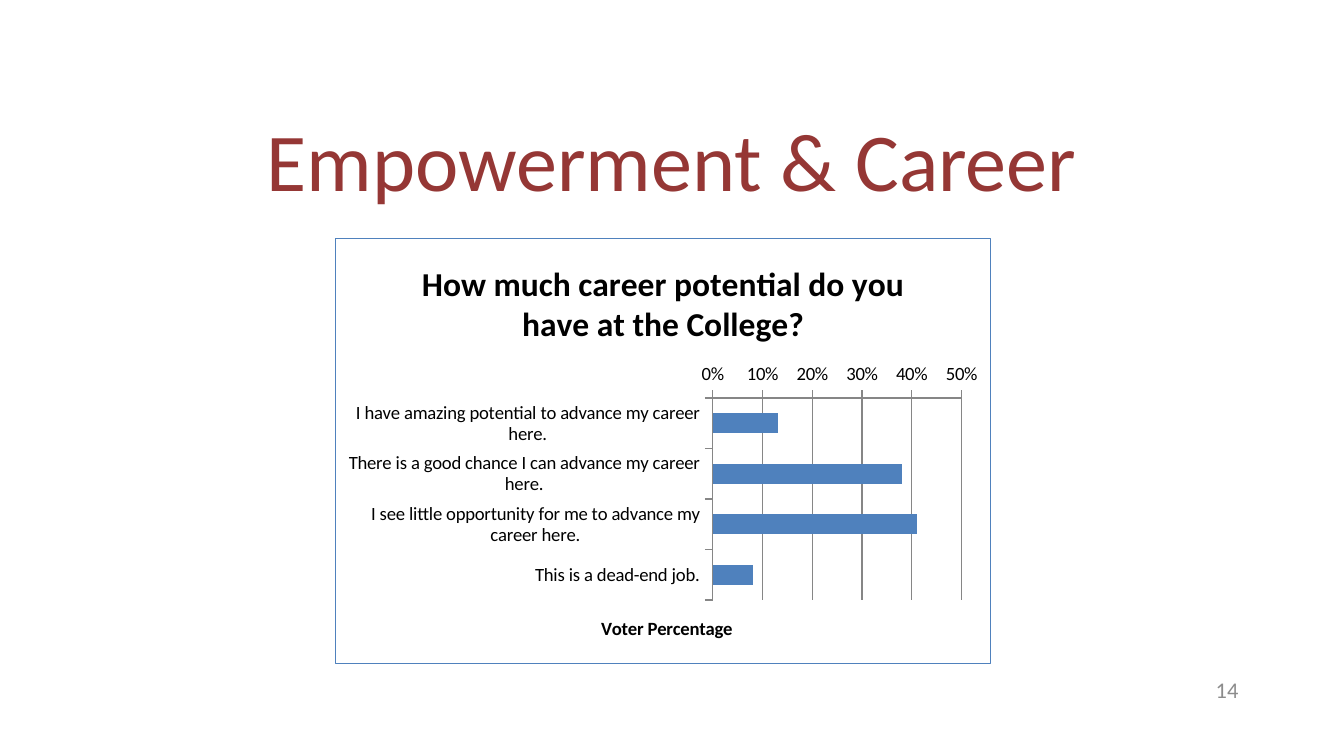
from dataclasses import dataclass

from lxml.etree import SubElement
from pptx import Presentation
from pptx.chart.data import CategoryChartData
from pptx.dml.color import RGBColor
from pptx.enum.chart import XL_CHART_TYPE, XL_TICK_MARK
from pptx.enum.text import MSO_ANCHOR, PP_ALIGN
from pptx.oxml import parse_xml
from pptx.oxml.ns import nsdecls, qn
from pptx.util import Pt


@dataclass(frozen=True)
class Theme:
    font: str = "Calibri"
    heading: str = "953735"
    bar: str = "4F81BD"
    grid: str = "868686"
    text: str = "000000"
    muted: str = "8C8C8C"
    title_size: int = 44
    chart_title_size: int = 18
    label_size: int = 10
    number_size: int = 12


def format_font(font, theme, size, color, bold=False):
    font.name = theme.font
    font.size = Pt(size)
    font.bold = bold
    font.color.rgb = RGBColor.from_string(color)


def write_text(text_frame, text, *, theme, size, color, bold=False,
               align=PP_ALIGN.CENTER, line_spacing=None):
    paragraph = text_frame.paragraphs[0]
    paragraph.alignment = align
    if line_spacing:
        paragraph.line_spacing = line_spacing
    run = paragraph.add_run()
    run.text = text
    format_font(run.font, theme, size, color, bold)


def set_line(line, color, width=0.75):
    line.color.rgb = RGBColor.from_string(color)
    line.width = Pt(width)


def set_layout(element, position, **fractions):
    """Fix a chart part at fractions (x, y, w, h) of the chart area."""
    for old_layout in element.findall(qn("c:layout")):
        element.remove(old_layout)
    layout = parse_xml(f"<c:layout {nsdecls('c')}><c:manualLayout/></c:layout>")
    manual = layout[0]
    if "w" in fractions:
        SubElement(manual, qn("c:layoutTarget"), val="inner")
    for name in ("x", "y"):
        SubElement(manual, qn(f"c:{name}Mode"), val="edge")
    for name, value in fractions.items():
        SubElement(manual, qn(f"c:{name}"), val=str(value))
    element.insert(position, layout)


class SlideBuilder:
    def __init__(self, slide, theme):
        self.slide = slide
        self.theme = theme

    def add_title(self, text, left, top, width, height):
        title = self.slide.shapes.title
        title.left, title.top = Pt(left), Pt(top)
        title.width, title.height = Pt(width), Pt(height)
        title.text_frame.vertical_anchor = MSO_ANCHOR.MIDDLE
        write_text(title.text_frame, text, theme=self.theme, line_spacing=0.9,
                   size=self.theme.title_size, color=self.theme.heading)

    def add_slide_number(self, text, left, top, width, height):
        box = self.slide.shapes.add_textbox(Pt(left), Pt(top), Pt(width), Pt(height))
        box.text_frame.word_wrap = True
        box.text_frame.vertical_anchor = MSO_ANCHOR.MIDDLE
        write_text(box.text_frame, text, theme=self.theme, align=PP_ALIGN.RIGHT,
                   size=self.theme.number_size, color=self.theme.muted)

    def add_bar_chart(self, title, axis_title, answers, left, top, width, height):
        theme = self.theme
        data = CategoryChartData(number_format="0%")
        data.categories = answers.keys()
        data.add_series("Series 1", answers.values())
        chart = self.slide.shapes.add_chart(
            XL_CHART_TYPE.BAR_CLUSTERED, Pt(left), Pt(top), Pt(width), Pt(height), data
        ).chart
        format_font(chart.font, theme, theme.label_size, theme.text)
        chart.has_legend = False
        chart.has_title = True
        write_text(chart.chart_title.text_frame, title, theme=theme, bold=True,
                   size=theme.chart_title_size, color=theme.text)

        plot = chart.plots[0]
        plot.gap_width = 150
        plot.vary_by_categories = False
        fill = plot.series[0].format.fill
        fill.solid()
        fill.fore_color.rgb = RGBColor.from_string(theme.bar)

        category_axis, value_axis = chart.category_axis, chart.value_axis
        category_axis.reverse_order = True
        for axis in (category_axis, value_axis):
            axis.major_tick_mark = XL_TICK_MARK.OUTSIDE
            axis.minor_tick_mark = XL_TICK_MARK.NONE
            set_line(axis.format.line, theme.grid)
        value_axis.minimum_scale, value_axis.maximum_scale = 0, 0.5
        value_axis.major_unit = 0.1
        value_axis.has_major_gridlines = True
        set_line(value_axis.major_gridlines.format.line, theme.grid)
        value_axis.tick_labels.number_format = "0%"
        value_axis.tick_labels.number_format_is_linked = False
        value_axis.has_title = True
        write_text(value_axis.axis_title.text_frame, axis_title, theme=theme,
                   bold=True, size=theme.label_size, color=theme.text)

        chart_space = chart.element
        plot_area = chart_space.find(f".//{qn('c:plotArea')}")
        set_layout(plot_area, 0, x=0.576, y=0.375, w=0.38, h=0.475)
        axis_title_element = value_axis.axis_title.element if hasattr(
            value_axis.axis_title, "element") else plot_area.find(
            f"{qn('c:valAx')}/{qn('c:title')}")
        set_layout(axis_title_element, 1, x=0.4, y=0.88)
        self.set_chart_border(chart_space)

    def set_chart_border(self, chart_space):
        border = parse_xml(
            f'<c:spPr {nsdecls("c", "a")}><a:noFill/><a:ln w="{Pt(0.75)}"><a:solidFill>'
            f'<a:srgbClr val="{self.theme.bar}"/></a:solidFill></a:ln></c:spPr>')
        chart_space.find(qn("c:chart")).addnext(border)


def main():
    presentation = Presentation()
    presentation.slide_width, presentation.slide_height = Pt(720), Pt(405)
    slide = presentation.slides.add_slide(presentation.slide_layouts[5])
    builder = SlideBuilder(slide, Theme())
    builder.add_title("Empowerment & Career", 49.5, 49, 621, 78.5)
    builder.add_bar_chart(
        "How much career potential do you have at the College?",
        "Voter Percentage",
        {
            "I have amazing potential to advance my career here.": 0.13,
            "There is a good chance I can advance my career here.": 0.38,
            "I see little opportunity for me to advance my career here.": 0.41,
            "This is a dead-end job.": 0.08,
        },
        179.5, 127.5, 351.5, 228.5,
    )
    builder.add_slide_number("14", 508.5, 358.5, 162, 21.5)
    presentation.save("out.pptx")


if __name__ == "__main__":
    main()
